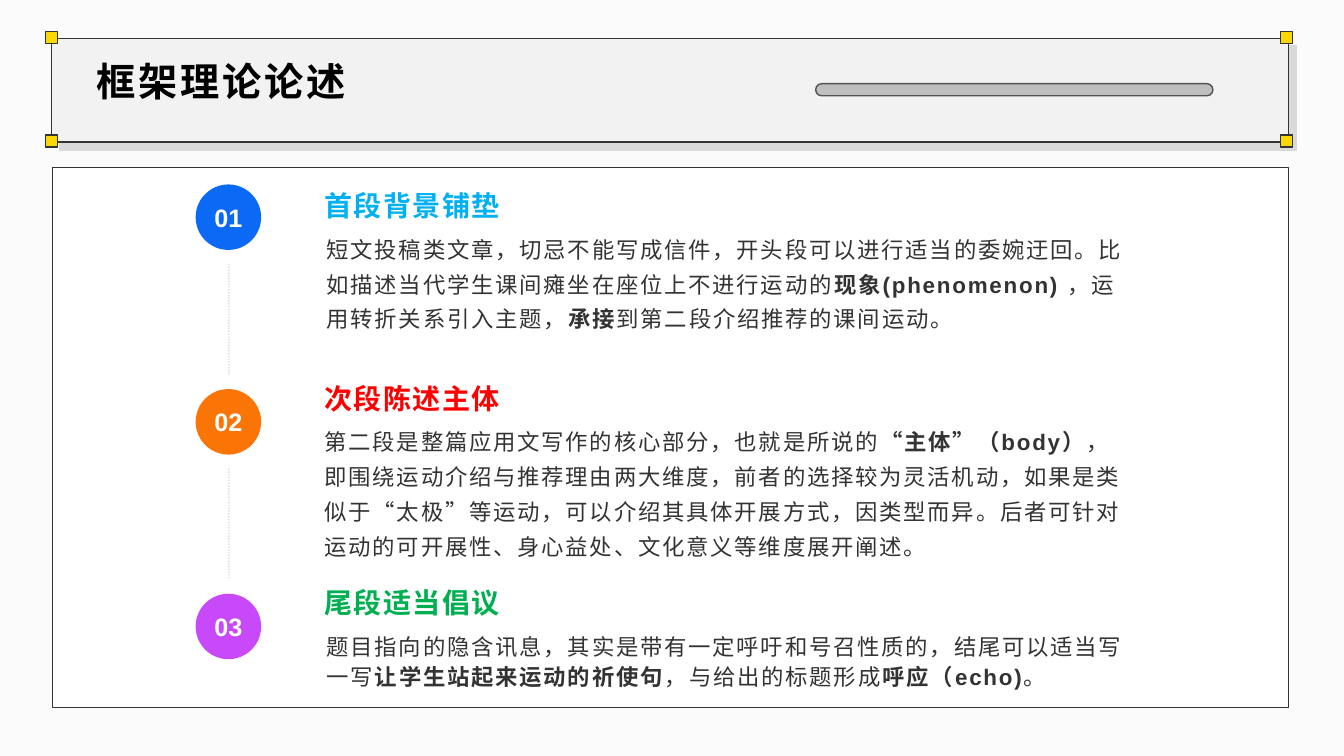
from dataclasses import dataclass

import pptx
import pptx.util
from lxml import etree
from pptx.dml.color import RGBColor
from pptx.enum.dml import MSO_LINE
from pptx.enum.shapes import MSO_CONNECTOR, MSO_SHAPE
from pptx.enum.text import MSO_ANCHOR, MSO_AUTO_SIZE, PP_ALIGN
from pptx.oxml import parse_xml
from pptx.oxml.ns import nsdecls, qn
from pptx.util import Inches, Pt


@dataclass(frozen=True)
class Theme:
    background: str = "FBFBFB"
    panel: str = "FFFFFF"
    banner: str = "F2F2F2"
    shadow: str = "D9D9D9"
    corner: str = "FAD706"
    bar: str = "BFBFBF"
    bar_line: str = "525252"
    ink: str = "333333"
    title: str = "000000"
    latin: str = "Arial"
    chinese: str = "Noto Sans CJK SC"
    title_size: int = 28
    heading_size: int = 20
    number_size: int = 18
    body_size: int = 16


theme = Theme()


def add_block(kind, left, top, width, height, fill, line=None):
    block = page.shapes.add_shape(
        kind, Inches(left), Inches(top), Inches(width), Inches(height))
    block.shadow.inherit = False
    block.fill.solid()
    block.fill.fore_color.rgb = RGBColor.from_string(fill)
    if line:
        block.line.color.rgb = RGBColor.from_string(line)
        block.line.width = Pt(1)
    else:
        block.line.fill.background()
    return block


def format_span(span, size, color, bold, latin, spacing=0):
    """Format one run; spacing is the letter spacing in points."""
    span.font.size = Pt(size)
    span.font.bold = bold
    span.font.color.rgb = RGBColor.from_string(color)
    span.font.name = latin
    properties = span.font._element if hasattr(span.font, "_element") else span._r.get_or_add_rPr()
    properties.set("lang", "zh-CN")
    properties.set("spc", str(round(spacing * 100)))
    etree.SubElement(properties, qn("a:ea")).set("typeface", theme.chinese)


deck = pptx.Presentation()
deck.slide_width, deck.slide_height = Inches(13.33), Inches(7.5)
page = deck.slides.add_slide(deck.slide_layouts[5])
page.background.fill.solid()
page.background.fill.fore_color.rgb = RGBColor.from_string(theme.background)

# Panel, banner and its corners
add_block(MSO_SHAPE.RECTANGLE, 0.52, 1.66, 12.26, 5.36, theme.panel, theme.ink)
banner = add_block(MSO_SHAPE.RECTANGLE, 0.51, 0.38, 12.27, 1.03, theme.banner, theme.ink)
effects = banner._element.spPr.find(qn("a:effectLst"))
effects.append(parse_xml(
    f'<a:outerShdw {nsdecls("a")} blurRad="0" dist="{Pt(8)}" dir="{45 * 60000}" '
    f'algn="tl" rotWithShape="0"><a:srgbClr val="{theme.shadow}"/></a:outerShdw>'))
for left in (0.45, 12.7):
    for top in (0.31, 1.34):
        add_block(MSO_SHAPE.RECTANGLE, left, top, 0.12, 0.12, theme.corner, theme.ink)
bar = add_block(MSO_SHAPE.ROUNDED_RECTANGLE, 8.09, 0.83, 3.94, 0.12, theme.bar, theme.bar_line)
bar.adjustments[0] = 0.5

# Title, brought in front of the banner
title = page.shapes.title
page.shapes.element.append(title.element)
title.left, title.top = Inches(0.86), Inches(0.57)
title.width, title.height = Inches(11.87), Inches(0.48)
frame = title.text_frame
frame.text = "框架理论论述"
frame.auto_size = MSO_AUTO_SIZE.NONE
frame.vertical_anchor = MSO_ANCHOR.TOP
para = frame.paragraphs[0]
para.alignment = PP_ALIGN.LEFT
para.line_spacing = 0.9
format_span(para.runs[0], theme.title_size, theme.title, True, theme.chinese, 2)

# Steps: circle colour, heading, heading colour, heading top,
# body left, top, height, line spacing, body pieces (every second one is bold)
steps = [
    ("0B6AF5", "首段背景铺垫", "00B0F0", 1.68, 3.14, 2.21, 1.12, 1.3, [
        "短文投稿类文章，切忌不能写成信件，开头段可以进行适当的委婉迂回。"
        "比如描述当代学生课间瘫坐在座位上不进行运动的",
        "现象(phenomenon) ",
        "，运用转折关系引入主题，",
        "承接",
        "到第二段介绍推荐的课间运动。"]),
    ("FA7406", "次段陈述主体", "FF0000", 3.6, 3.12, 4.12, 1.49, 1.3, [
        "第二段是整篇应用文写作的核心部分，也就是所说的",
        "“主体”（body）",
        "，即围绕运动介绍与推荐理由两大维度，前者的选择较为灵活机动，"
        "如果是类似于“太极”等运动，可以介绍其具体开展方式，因类型而异。"
        "后者可针对运动的可开展性、身心益处、文化意义等维度展开阐述。"]),
    ("C749F9", "尾段适当倡议", "00B050", 5.62, 3.12 + 0.02, 6.21, 0.85, 1.1, [
        "题目指向的隐含讯息，其实是带有一定呼吁和号召性质的，结尾可以适当写一写",
        "让学生站起来运动的祈使句",
        "，与给出的标题形成",
        "呼应（echo)",
        "。"]),
]
circle_left, circle_top, circle_size, step_pitch = 1.94, 1.83, 0.65, 2.03

for index, (color, heading, heading_color, heading_top,
            body_left, body_top, body_height, spacing, pieces) in enumerate(steps):
    top = circle_top + index * step_pitch
    circle = add_block(MSO_SHAPE.OVAL, circle_left, top, circle_size, circle_size, color)
    frame = circle.text_frame
    frame.margin_left = frame.margin_right = frame.margin_top = frame.margin_bottom = 0
    frame.vertical_anchor = MSO_ANCHOR.MIDDLE
    frame.text = f"{index + 1:02d}"
    frame.paragraphs[0].alignment = PP_ALIGN.CENTER
    format_span(frame.paragraphs[0].runs[0], theme.number_size, theme.panel, True, theme.latin)

    if index < len(steps) - 1:
        center = Inches(2.27)
        link = page.shapes.add_connector(
            MSO_CONNECTOR.STRAIGHT, center, Inches(top + 0.79), center, Inches(top + 1.89))
        link.line.color.rgb = RGBColor.from_string(theme.bar)
        link.line.width = Pt(1)
        link.line.dash_style = MSO_LINE.ROUND_DOT
        properties = link._element.spPr
        etree.SubElement(properties.find(".//" + qn("a:srgbClr")), qn("a:alpha")).set("val", "50000")
        etree.SubElement(properties, qn("a:effectLst"))

    box = page.shapes.add_textbox(Inches(3.12), Inches(heading_top), Inches(8.12), Inches(0.52))
    frame = box.text_frame
    frame.word_wrap = True
    frame.margin_bottom = 0
    frame.vertical_anchor = MSO_ANCHOR.BOTTOM
    frame.text = heading
    format_span(frame.paragraphs[0].runs[0], theme.heading_size, heading_color, True, theme.chinese, 1)

    box = page.shapes.add_textbox(
        Inches(body_left), Inches(body_top), Inches(8.12), Inches(body_height))
    box.text_frame.word_wrap = True
    para = box.text_frame.paragraphs[0]
    para.line_spacing = spacing
    para.space_after = Pt(10)
    for position, piece in enumerate(pieces):
        span = para.add_run()
        span.text = piece
        format_span(span, theme.body_size, theme.ink, position % 2 == 1, theme.latin, 1.3)

deck.save("out.pptx")
